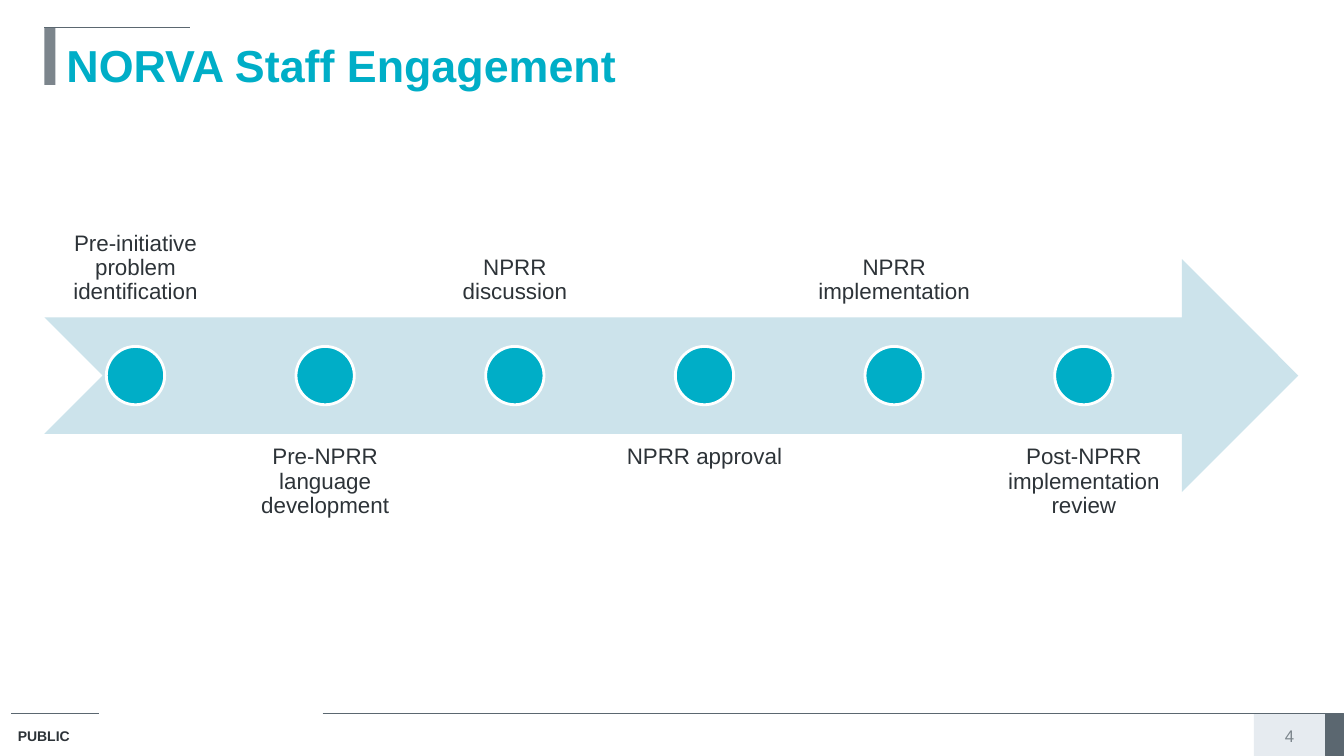
from lxml.etree import SubElement
from pptx import Presentation
from pptx.dml.color import RGBColor
from pptx.enum.shapes import MSO_CONNECTOR, MSO_SHAPE
from pptx.enum.text import MSO_ANCHOR, MSO_AUTO_SIZE, PP_ALIGN
from pptx.oxml.ns import qn
from pptx.util import Cm, Pt

TITLE = "NORVA Staff Engagement"
FOOTER = "PUBLIC"
PAGE_NUMBER = "4"
STAGES = [
    "Pre-initiative problem identification",
    "Pre-NPRR language development",
    "NPRR discussion",
    "NPRR approval",
    "NPRR implementation",
    "Post-NPRR implementation review",
]

TEAL = RGBColor(0x00, 0xAE, 0xC7)
PALE_TEAL = RGBColor(0xCC, 0xE3, 0xEB)
INK = RGBColor(0x2D, 0x33, 0x38)
SLATE = RGBColor(0x5B, 0x67, 0x70)
GREY = RGBColor(0x7C, 0x85, 0x8C)
PALE_GREY = RGBColor(0xE6, 0xEB, 0xF0)
WHITE = RGBColor(0xFF, 0xFF, 0xFF)

FONT = "Arial"
MARGIN = 1.12
FOOTER_TOP = 17.98
ARROW_TOP, ARROW_WIDTH, ARROW_HEIGHT = 6.53, 31.6, 5.87
LABEL_LEFT, LABEL_WIDTH, LABEL_PITCH = 1.14, 4.55, 4.78
LABEL_TOPS = (2.1, 10.93)
LABEL_INSET = 0.3
DOT_SIZE = 1.47


def add_filled(slide, kind, left, top, width, height, fill, line=None, weight=0.75):
    """Add a preset shape with a plain fill and an optional outline."""
    shape = slide.shapes.add_shape(kind, Cm(left), Cm(top), Cm(width), Cm(height))
    shape.shadow.inherit = False
    shape.fill.solid()
    shape.fill.fore_color.rgb = fill
    if line is None:
        shape.line.fill.background()
    else:
        shape.line.color.rgb = line
        shape.line.width = Pt(weight)


def add_rule(slide, left, right, top):
    """Add a thin horizontal line."""
    rule = slide.shapes.add_connector(
        MSO_CONNECTOR.STRAIGHT, Cm(left), Cm(top), Cm(right), Cm(top)
    )
    rule.line.color.rgb = SLATE
    rule.line.width = Pt(0.75)
    SubElement(rule._element.spPr, qn("a:effectLst"))


def write(shape, text, size, color, bold=False, align=PP_ALIGN.LEFT, anchor=MSO_ANCHOR.TOP):
    """Put one formatted paragraph into a shape and return the paragraph."""
    frame = shape.text_frame
    frame.text = text
    frame.word_wrap = True
    frame.auto_size = MSO_AUTO_SIZE.NONE
    frame.vertical_anchor = anchor
    paragraph = frame.paragraphs[0]
    paragraph.alignment = align
    font = paragraph.runs[0].font
    font.name, font.size, font.bold = FONT, Pt(size), bold
    font.color.rgb = color
    return paragraph


def add_text_box(slide, left, top, width, height):
    """Add an empty text box."""
    return slide.shapes.add_textbox(Cm(left), Cm(top), Cm(width), Cm(height))


def add_frame(slide):
    """Draw the title, its accent and the footer."""
    add_filled(slide, MSO_SHAPE.RECTANGLE, 31.6, FOOTER_TOP, 1.98, 1.07, PALE_GREY)
    add_filled(slide, MSO_SHAPE.RECTANGLE, 33.4, FOOTER_TOP, 0.46, 1.07, SLATE, SLATE)
    add_rule(slide, 0.28, 2.49, FOOTER_TOP)
    add_rule(slide, 8.13, 33.53, FOOTER_TOP)
    write(add_text_box(slide, 0.2, 18.21, 2.62, 0.71), FOOTER, 10, INK, bold=True)
    write(add_text_box(slide, 31.6, 18.24, 1.8, 0.61), PAGE_NUMBER, 12, GREY,
          align=PP_ALIGN.CENTER, anchor=MSO_ANCHOR.MIDDLE)

    add_filled(slide, MSO_SHAPE.RECTANGLE, MARGIN, 0.69, 0.28, 1.45, GREY)
    add_rule(slide, MARGIN, 4.8, 0.69)
    title = slide.shapes.title
    title.left, title.top, title.width, title.height = Cm(1.42), Cm(0.71), Cm(31.6), Cm(1.45)
    write(title, TITLE, 32, TEAL, bold=True)
    title.text_frame.margin_top = Cm(0.24)


def add_timeline(slide):
    """Draw the arrow with its dots and alternating labels."""
    add_filled(slide, MSO_SHAPE.NOTCHED_RIGHT_ARROW, MARGIN, ARROW_TOP,
               ARROW_WIDTH, ARROW_HEIGHT, PALE_TEAL)
    dot_top = ARROW_TOP + (ARROW_HEIGHT - DOT_SIZE) / 2
    for index, stage in enumerate(STAGES):
        left = LABEL_LEFT + index * LABEL_PITCH
        below = index % 2
        label = add_text_box(slide, left, LABEL_TOPS[below], LABEL_WIDTH, ARROW_HEIGHT)
        paragraph = write(label, stage, 16, INK, align=PP_ALIGN.CENTER,
                          anchor=MSO_ANCHOR.TOP if below else MSO_ANCHOR.BOTTOM)
        paragraph.line_spacing = 0.9
        frame = label.text_frame
        frame.margin_left = frame.margin_right = Cm(LABEL_INSET)
        frame.margin_top = frame.margin_bottom = Cm(LABEL_INSET)
        add_filled(slide, MSO_SHAPE.OVAL, left + (LABEL_WIDTH - DOT_SIZE) / 2, dot_top,
                   DOT_SIZE, DOT_SIZE, TEAL, WHITE, 2)


def main():
    """Build the slide and save it."""
    presentation = Presentation()
    presentation.slide_width, presentation.slide_height = Cm(33.87), Cm(19.05)
    slide = presentation.slides.add_slide(presentation.slide_layouts.get_by_name("Title Only"))
    add_frame(slide)
    add_timeline(slide)
    presentation.save("out.pptx")


if __name__ == "__main__":
    main()
